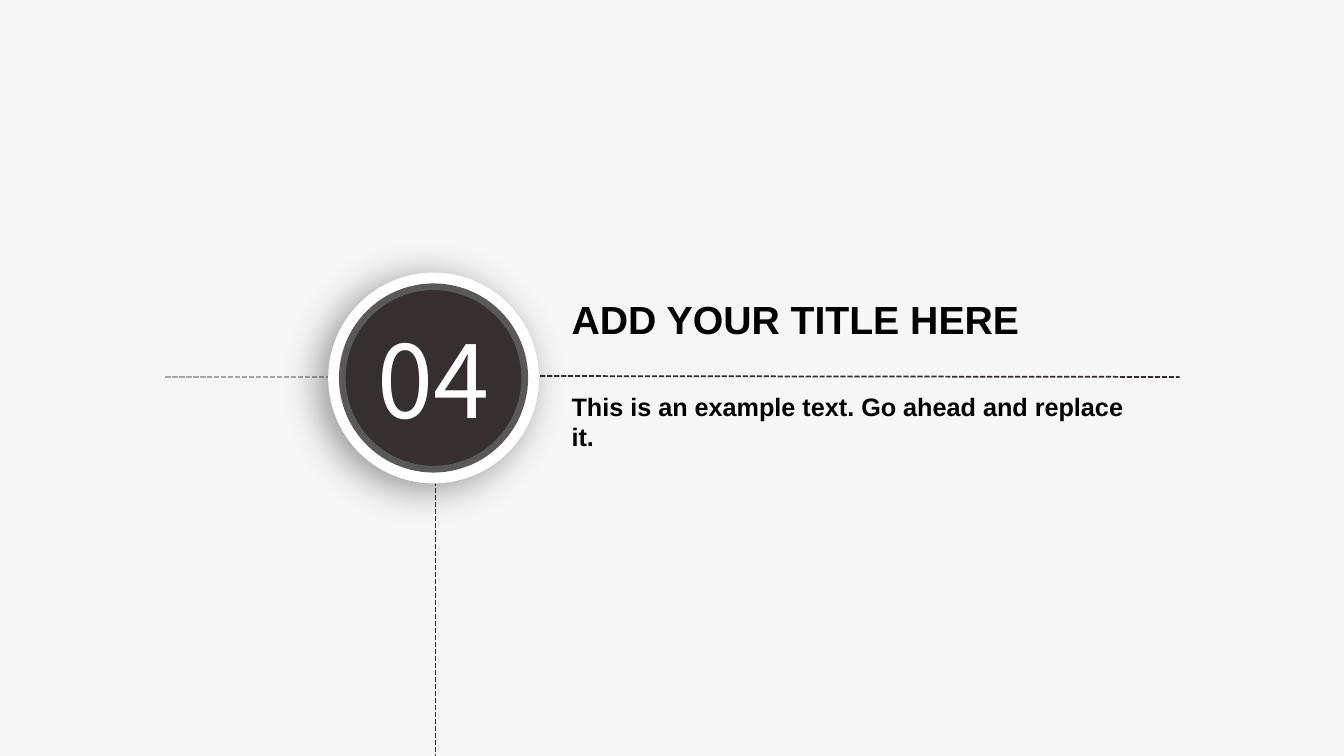
from lxml import etree
from pptx import Presentation
from pptx.dml.color import RGBColor
from pptx.enum.dml import MSO_LINE
from pptx.enum.shapes import MSO_CONNECTOR, MSO_SHAPE
from pptx.enum.text import MSO_ANCHOR, MSO_AUTO_SIZE, PP_ALIGN
from pptx.oxml.ns import qn
from pptx.util import Inches, Pt

STRAIGHT = MSO_CONNECTOR.STRAIGHT
ELLIPSE = MSO_SHAPE.OVAL
DASH = MSO_LINE.SQUARE_DOT
MIDDLE = MSO_ANCHOR.MIDDLE
NO_AUTOFIT = MSO_AUTO_SIZE.NONE
LEFT = PP_ALIGN.LEFT
CENTER = PP_ALIGN.CENTER

COLORS = {
    "background": "F7F7F7",
    "dark": "352F2F",
    "ring": "595959",
    "pale": "A6A6A6",
    "white": "FFFFFF",
    "black": "000000",
}


def color(name):
    return RGBColor.from_string(COLORS[name])


def write_text(shape, text, size, font="Arial", fill="black", bold=False, align=LEFT, inset=0.1):
    frame = shape.text_frame
    frame.word_wrap = True
    frame.auto_size = NO_AUTOFIT
    frame.vertical_anchor = MIDDLE
    frame.margin_left = frame.margin_right = Inches(inset)
    frame.margin_top = frame.margin_bottom = Inches(inset / 2)
    paragraph = frame.paragraphs[0]
    paragraph.alignment = align
    run = paragraph.add_run()
    run.text = text
    run.font.name = font
    run.font.size = Pt(size)
    run.font.bold = bold
    run.font.color.rgb = color(fill)


class SectionSlide:
    def __init__(self, presentation):
        self.slide = presentation.slides.add_slide(presentation.slide_layouts[5])
        self.line_width = Pt(1.25)
        background = self.slide.background.fill
        background.solid()
        background.fore_color.rgb = color("background")

    def dashed_line(self, start, end, stroke):
        connector = self.slide.shapes.add_connector(
            STRAIGHT, *(Inches(value) for value in (*start, *end))
        )
        connector.line.color.rgb = color(stroke)
        connector.line.width = self.line_width
        connector.line.dash_style = DASH
        etree.SubElement(connector._element.spPr, qn("a:effectLst"))

    def circle(self, center, diameter, fill, stroke=None, stroke_width=0):
        left, top = (Inches(value - diameter / 2) for value in center)
        shape = self.slide.shapes.add_shape(
            ELLIPSE, left, top, Inches(diameter), Inches(diameter)
        )
        shape.shadow.inherit = False
        shape.fill.solid()
        shape.fill.fore_color.rgb = color(fill)
        if stroke:
            shape.line.color.rgb = color(stroke)
            shape.line.width = Pt(stroke_width)
        else:
            shape.line.fill.background()
        return shape

    def shadow(self, shape, blur, distance, angle, opacity):
        effects = shape._element.spPr.find(qn("a:effectLst"))
        outer = etree.SubElement(
            effects, qn("a:outerShdw"), blurRad=str(Pt(blur)), dist=str(Pt(distance)),
            dir=str(angle * 60000), algn="ctr", rotWithShape="0",
        )
        tint = etree.SubElement(outer, qn("a:srgbClr"), val=COLORS["black"])
        etree.SubElement(tint, qn("a:alpha"), val=str(opacity * 1000))

    def title(self, text, left, top, width, height):
        shape = self.slide.shapes.title
        shape.left, shape.top = Inches(left), Inches(top)
        shape.width, shape.height = Inches(width), Inches(height)
        write_text(shape, text, 28, bold=True)

    def text_box(self, text, left, top, width, height):
        shape = self.slide.shapes.add_textbox(
            Inches(left), Inches(top), Inches(width), Inches(height)
        )
        write_text(shape, text, 18, bold=True)


def main():
    presentation = Presentation()
    presentation.slide_width = Inches(13.33)
    presentation.slide_height = Inches(7.5)
    section = SectionSlide(presentation)

    section.dashed_line((4.32, 4.22), (4.32, 7.5), "dark")
    section.dashed_line((5.01, 3.73), (11.7, 3.74), "dark")
    section.dashed_line((1.64, 3.74), (3.61, 3.74), "pale")

    badge_center = (4.3, 3.75)
    rim = section.circle(badge_center, 2.09, "white")
    section.shadow(rim, blur=28, distance=8, angle=150, opacity=40)
    badge = section.circle(badge_center, 1.81, "dark", "ring", 4.75)
    write_text(badge, "04", 72, font="Noto Sans CJK JP", fill="white", align=CENTER, inset=0)

    section.title("ADD YOUR TITLE HERE", 5.57, 2.81, 5.39, 0.7)
    section.text_box(
        "This is an example text. Go ahead and replace it.", 5.57, 3.83, 5.78, 0.7
    )
    presentation.save("out.pptx")


if __name__ == "__main__":
    main()
